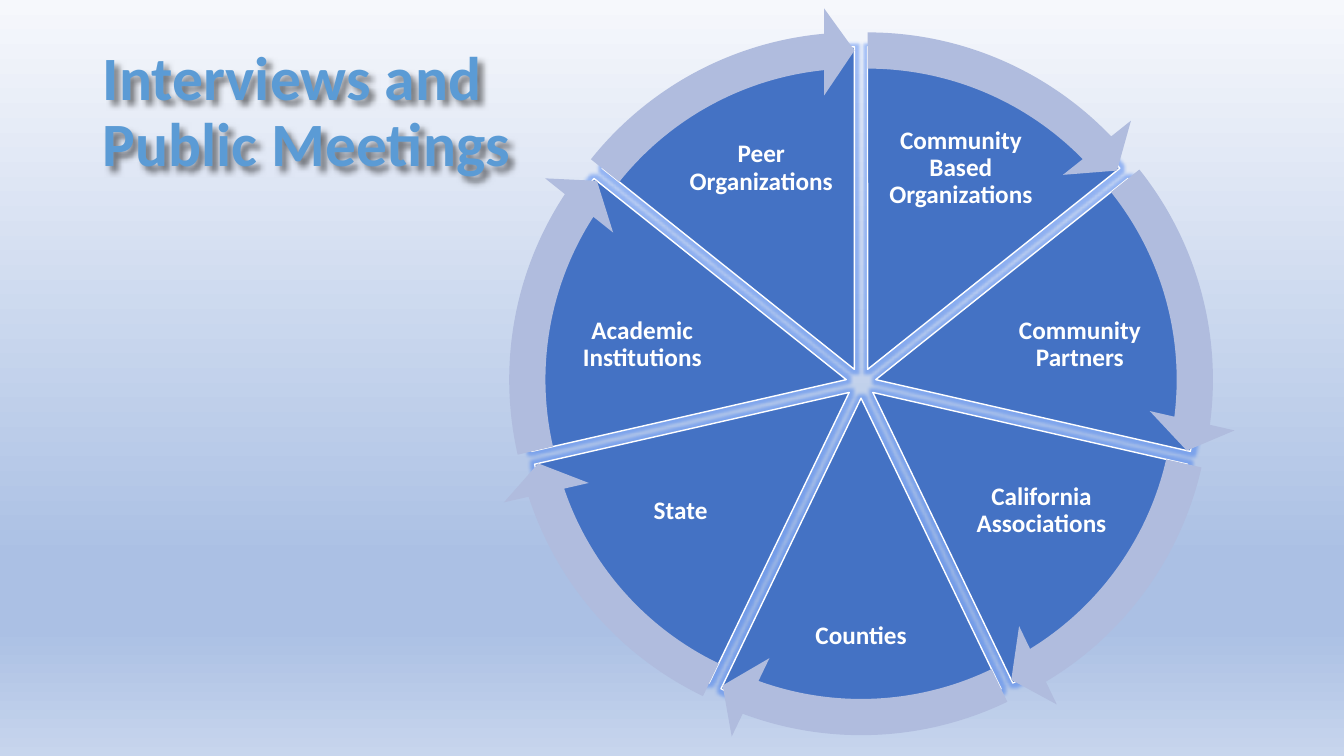
from math import cos, radians, sin

from lxml import etree
from pptx import Presentation
from pptx.dml.color import RGBColor
from pptx.enum.shapes import MSO_SHAPE
from pptx.enum.text import MSO_ANCHOR, PP_ALIGN
from pptx.oxml.ns import nsdecls, qn
from pptx.oxml import parse_xml
from pptx.util import Inches, Pt

PIE, ARROW = MSO_SHAPE.PIE, MSO_SHAPE.CIRCULAR_ARROW
LEFT, CENTER, MIDDLE = PP_ALIGN.LEFT, PP_ALIGN.CENTER, MSO_ANCHOR.MIDDLE

# Content, clockwise from the top
TITLE = "Interviews and \vPublic Meetings"
SECTORS = [
    "Community Based Organizations", "Community Partners",
    "California Associations", "Counties", "State",
    "Academic Institutions", "Peer Organizations",
]
# Label centre from the hub, then size; the left half mirrors the right
LABEL_SPOTS = [
    (0.99, -2.13, 1.52, 1.22), (2.17, -0.38, 1.75, 1.07),
    (1.79, 1.27, 1.52, 1.18), (0, 2.51, 1.48, 1.07),
]
COLORS = {"title": "5B9BD5", "slice": "4472C4", "arrow": "B0BCDE",
          "white": "FFFFFF", "glow": "2268F0", "shadow": "000000"}
BACKGROUND = [(0, "F6F8FC"), (74, "ABC0E4"), (83, "ABC0E4"), (100, "C7D5ED")]
FONT = "Calibri"

# Wheel geometry, in inches; a full turn is 216 adjustment units
HUB_X, HUB_Y, PUSH = 8.54, 3.8, 0.15
PIE_SIZE, ARROW_SIZE = 6.4, 7.19
TURN, TOP = 216, 162
BAND, HEAD_ANGLE, HEAD_WIDTH = 0.05, 3.275, 0.06


def rgb(name):
    return RGBColor.from_string(COLORS[name])


def write(sp, text, size, color, align=CENTER, inset=None):
    tf = sp.text_frame
    tf.word_wrap = True
    tf.vertical_anchor = MIDDLE
    if inset is not None:
        tf.margin_left = tf.margin_right = Inches(inset)
        tf.margin_top = tf.margin_bottom = Inches(inset)
    tf.text = text
    p = tf.paragraphs[0]
    p.alignment, p.line_spacing = align, 0.9
    for r in p.runs:
        r.font.name, r.font.size, r.font.bold = FONT, Pt(size), True
        r.font.color.rgb = rgb(color)


def box(cx, cy, w, h):
    return [Inches(v) for v in (cx - w / 2, cy - h / 2, w, h)]


def add_effect(sp, tag, color, alpha, **attrs):
    settings = " ".join(f'{k}="{v}"' for k, v in attrs.items())
    sp_pr = sp._element.spPr
    for old in sp_pr.findall(qn("a:effectLst")):
        sp_pr.remove(old)
    sp_pr.append(parse_xml(
        f'<a:effectLst {nsdecls("a")}><a:{tag} {settings}>'
        f'<a:srgbClr val="{COLORS[color]}"><a:alpha val="{alpha * 1000}"/>'
        f'</a:srgbClr></a:{tag}></a:effectLst>'))


def add_round(slide, kind, center, size, fill, adjustments):
    sp = slide.shapes.add_shape(kind, *box(*center, size, size))
    sp.shadow.inherit = False
    sp.fill.solid()
    sp.fill.fore_color.rgb = rgb(fill)
    for i, value in enumerate(adjustments):
        sp.adjustments[i] = value
    return sp


def set_background(slide):
    fill = slide.background.fill
    fill.gradient()
    fill.gradient_angle = 270
    stops = slide._element.find(".//" + qn("a:gsLst"))
    stops.clear()
    for pos, color in BACKGROUND:
        gs = etree.SubElement(stops, qn("a:gs"), pos=str(pos * 1000))
        etree.SubElement(gs, qn("a:srgbClr"), val=color)


def main():
    prs = Presentation()
    prs.slide_width, prs.slide_height = Inches(13.33), Inches(7.5)
    slide = prs.slides.add_slide(prs.slide_layouts[5])
    set_background(slide)

    # Title
    title = slide.shapes.title
    title.left, title.top = Inches(0.92), Inches(0.4)
    title.width, title.height = Inches(11.5), Inches(1.45)
    write(title, TITLE, 44, "title", align=LEFT)
    add_effect(title, "outerShdw", "shadow", 50,
               blurRad=50800, dist=50800, dir=2700000)

    # Each sector is pushed out from the hub along its middle angle
    count = len(SECTORS)
    step = TURN / count
    starts = [(TOP + i * step) % TURN for i in range(count)]
    ends = starts[1:] + starts[:1]
    mids = [radians(-90 + (i + 0.5) * 360 / count) for i in range(count)]
    centers = [(HUB_X + PUSH * cos(a), HUB_Y + PUSH * sin(a)) for a in mids]

    # Slices and labels
    for i, text in enumerate(SECTORS):
        sp = add_round(slide, PIE, centers[i], PIE_SIZE, "slice",
                       (starts[i], ends[i]))
        sp.line.color.rgb = rgb("white")
        sp.line.width = Pt(1)
        add_effect(sp, "glow", "glow", 40, rad=63500)

        dx, dy, w, h = LABEL_SPOTS[min(i, count - 1 - i)]
        side = 1 if i < count / 2 else -1
        label = slide.shapes.add_textbox(
            *box(HUB_X + side * dx, HUB_Y + dy, w, h))
        write(label, text, 18, "white", inset=0.03)

    # Arrows around the rim
    for center, start, end in zip(centers, starts, ends):
        sp = add_round(slide, ARROW, center, ARROW_SIZE, "arrow",
                       (BAND, HEAD_ANGLE, (end - HEAD_ANGLE) % TURN, start,
                        HEAD_WIDTH))
        sp.line.fill.background()

    prs.save("out.pptx")


if __name__ == "__main__":
    main()
